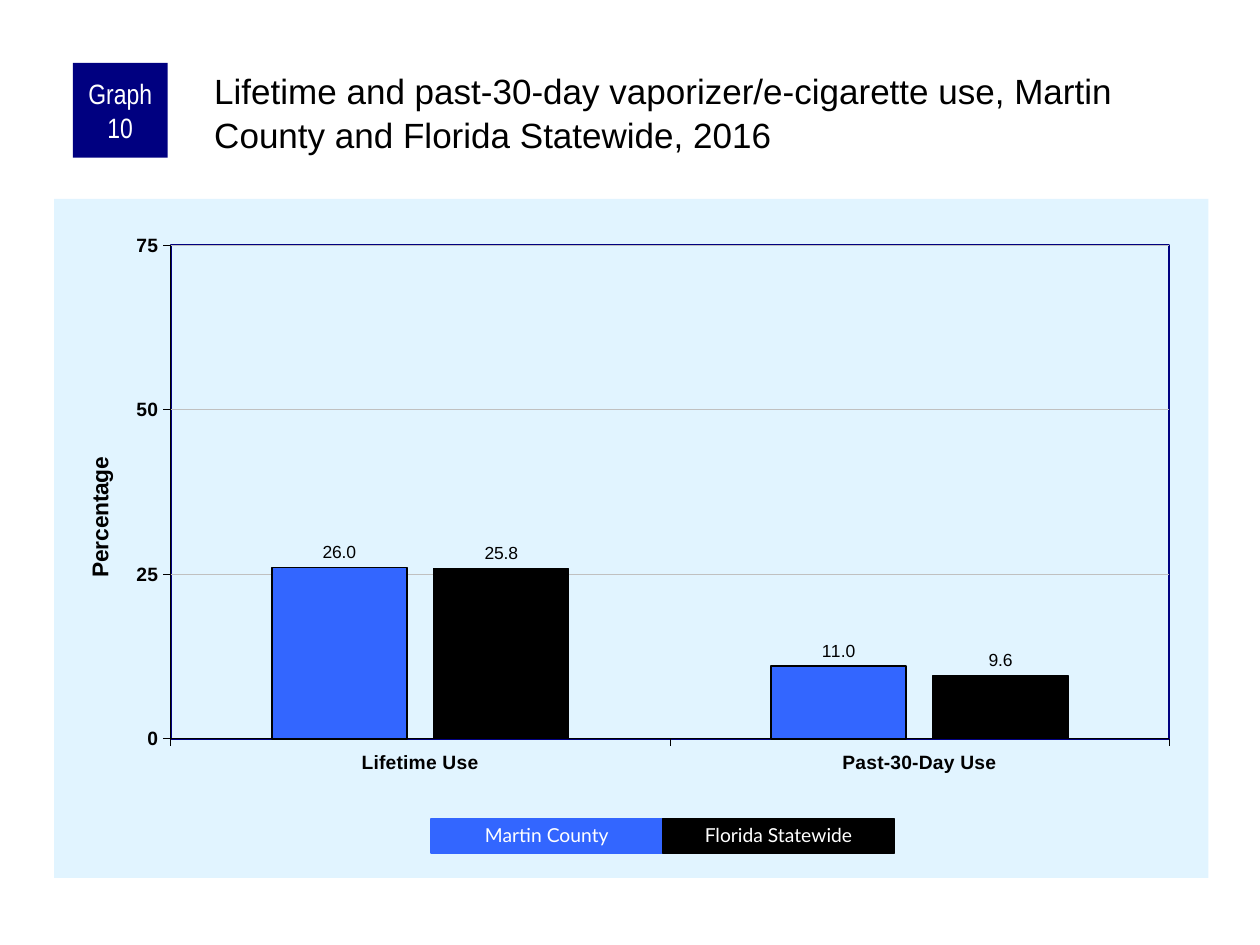
from lxml import etree
from pptx import Presentation
from pptx.chart.data import CategoryChartData
from pptx.dml.color import RGBColor
from pptx.enum.chart import XL_CHART_TYPE, XL_LABEL_POSITION, XL_TICK_MARK
from pptx.enum.shapes import MSO_SHAPE
from pptx.enum.text import MSO_ANCHOR, PP_ALIGN
from pptx.oxml import parse_xml
from pptx.oxml.ns import nsdecls, qn
from pptx.util import Cm, Pt

COLUMN = XL_CHART_TYPE.COLUMN_CLUSTERED
OUTER = XL_LABEL_POSITION.OUTSIDE_END
TICK_OUT, TICK_NONE = XL_TICK_MARK.OUTSIDE, XL_TICK_MARK.NONE
RECT = MSO_SHAPE.RECTANGLE
TOP, MIDDLE = MSO_ANCHOR.TOP, MSO_ANCHOR.MIDDLE
LEFT, CENTER = PP_ALIGN.LEFT, PP_ALIGN.CENTER

COLORS = {
    "ink": "000000",
    "paper": "FFFFFF",
    "navy": "000080",
    "blue": "3366FF",
    "pale": "E1F4FF",
    "grid": "C0C0C0",
}
GROUPS = ("Lifetime Use", "Past-30-Day Use")
SERIES = (
    ("Martin County", (26.0, 11.0), "blue", 1),
    ("Florida Statewide", (25.8, 9.6), "ink", 0.75),
)


def color(name):
    """Return the named colour."""
    return RGBColor.from_string(COLORS[name])


def style_font(font, size, name="Arial", tint="ink", bold=False):
    """Set the face, size, colour and weight of a font."""
    font.name, font.size, font.bold = name, Pt(size), bold
    font.color.rgb = color(tint)


def style_line(line, tint, width):
    """Set the colour and width of a line."""
    line.color.rgb = color(tint)
    line.width = Pt(width)


def write(shape, text, size, face, tint, align, anchor, insets, space=1.0):
    """Fill a shape with one formatted paragraph."""
    frame = shape.text_frame
    frame.text = text
    frame.word_wrap = True
    frame.vertical_anchor = anchor
    sides = (Cm(side) for side in insets)
    (frame.margin_left, frame.margin_top,
     frame.margin_right, frame.margin_bottom) = sides
    para = frame.paragraphs[0]
    para.alignment, para.line_spacing = align, space
    style_font(para.runs[0].font, size, face, tint)


def add_box(slide, left, top, width, height, tint, edge=None):
    """Add a flat rectangle with an optional outline."""
    box = slide.shapes.add_shape(RECT, Cm(left), Cm(top), Cm(width), Cm(height))
    box.shadow.inherit = False
    box.fill.solid()
    box.fill.fore_color.rgb = color(tint)
    if edge:
        style_line(box.line, tint, edge)
    else:
        box.line.fill.background()
    return box


def add_title(slide, text):
    """Add the slide heading."""
    box = slide.shapes.add_textbox(Cm(4.24), Cm(1.27), Cm(20.12), Cm(2.11))
    write(box, text, 20, "Arial", "ink", LEFT, TOP, (0.08, 0.08, 0, 0), 1.05)


def add_badge(slide, text):
    """Add the graph number badge."""
    box = add_box(slide, 1.47, 1.27, 1.91, 1.91, "navy")
    write(box, text, 16, "Arial Narrow", "paper", CENTER, MIDDLE,
          (0.13, 0, 0.13, 0))


def add_keys(slide):
    """Add one legend box per series, side by side."""
    width = 4.67
    for i, (name, _, tint, _) in enumerate(SERIES):
        box = add_box(slide, 8.69 + i * width, 16.51, width, 0.69, tint, 0.75)
        write(box, name, 11, "Lato", "paper", CENTER, MIDDLE,
              (0.25, 0.13, 0.25, 0.13), 0.9)


def set_layout(node, **parts):
    """Give a chart part a fixed place within the chart."""
    layout = node.find(qn("c:layout"))
    if layout is None:
        layout = parse_xml(f"<c:layout {nsdecls('c')}/>")
        node.insert(0, layout)
    for child in list(layout):
        layout.remove(child)
    manual = etree.SubElement(layout, qn("c:manualLayout"))
    for tag, value in parts.items():
        etree.SubElement(manual, qn(f"c:{tag}")).set("val", str(value))


def make_props(fill, line):
    """Build the fill and outline of a chart part."""
    return parse_xml(f"<c:spPr {nsdecls('c', 'a')}>{fill}{line}</c:spPr>")


def paint(tint):
    """Build a solid fill."""
    return f'<a:solidFill><a:srgbClr val="{COLORS[tint]}"/></a:solidFill>'


def style_frame(chart):
    """Place and colour the chart and plot areas."""
    root = chart.element
    body = root.find(qn("c:chart"))
    body.addnext(make_props(paint("pale"), "<a:ln><a:noFill/></a:ln>"))
    plot = body.find(qn("c:plotArea"))
    set_layout(plot, layoutTarget="inner", xMode="edge", yMode="edge",
               x=0.101, y=0.068, w=0.865, h=0.727)
    edge = f'<a:ln w="12700">{paint("navy")}</a:ln>'
    plot.append(make_props("<a:noFill/>", edge))


def style_axes(chart):
    """Format both axes, the gridlines and the axis title."""
    for axis in (chart.category_axis, chart.value_axis):
        axis.major_tick_mark, axis.minor_tick_mark = TICK_OUT, TICK_NONE
        style_font(axis.tick_labels.font, 11, bold=True)
        style_line(axis.format.line, "ink", 0.25)
    axis = chart.value_axis
    axis.minimum_scale, axis.maximum_scale, axis.major_unit = 0, 75, 25
    axis.tick_labels.number_format = "0"
    axis.tick_labels.number_format_is_linked = False
    style_line(axis.major_gridlines.format.line, "grid", 0.25)
    title = axis.axis_title
    title.text_frame.text = "Percentage"
    style_font(title.text_frame.paragraphs[0].runs[0].font, 13, bold=True)
    set_layout(title.element if hasattr(title, "element") else title._element,
               xMode="edge", yMode="edge", x=0.024, y=0.374)


def style_bars(chart):
    """Colour the bars and show their values."""
    plot = chart.plots[0]
    plot.gap_width, plot.overlap = 150, -20
    plot.vary_by_categories = False
    for bars, (_, _, tint, edge) in zip(plot.series, SERIES):
        bars.format.fill.solid()
        bars.format.fill.fore_color.rgb = color(tint)
        style_line(bars.format.line, "ink", edge)
        labels = bars.data_labels
        labels.show_value = True
        labels.position = OUTER
        labels.number_format = "0.0"
        labels.number_format_is_linked = False
        style_font(labels.font, 10)


def add_graph(slide):
    """Add the clustered column chart."""
    data = CategoryChartData(number_format="0.0")
    data.categories = GROUPS
    for i, (_, values, _, _) in enumerate(SERIES, 1):
        data.add_series(f"Series {i}", values)
    frame = slide.shapes.add_chart(
        COLUMN, Cm(1.09), Cm(4.01), Cm(23.27), Cm(13.69), data)
    chart = frame.chart
    chart.has_legend = chart.has_title = False
    style_font(chart.font, 11.5)
    style_axes(chart)
    style_bars(chart)
    style_frame(chart)


def main():
    """Build and save the slide."""
    deck = Presentation()
    deck.slide_width, deck.slide_height = Cm(25.4), Cm(19.05)
    slide = deck.slides.add_slide(deck.slide_layouts[6])
    add_graph(slide)
    add_badge(slide, "Graph 10")
    add_title(slide, "Lifetime and past-30-day vaporizer/e-cigarette use, "
                     "Martin County and Florida Statewide, 2016")
    add_keys(slide)
    deck.save("out.pptx")


if __name__ == "__main__":
    main()
